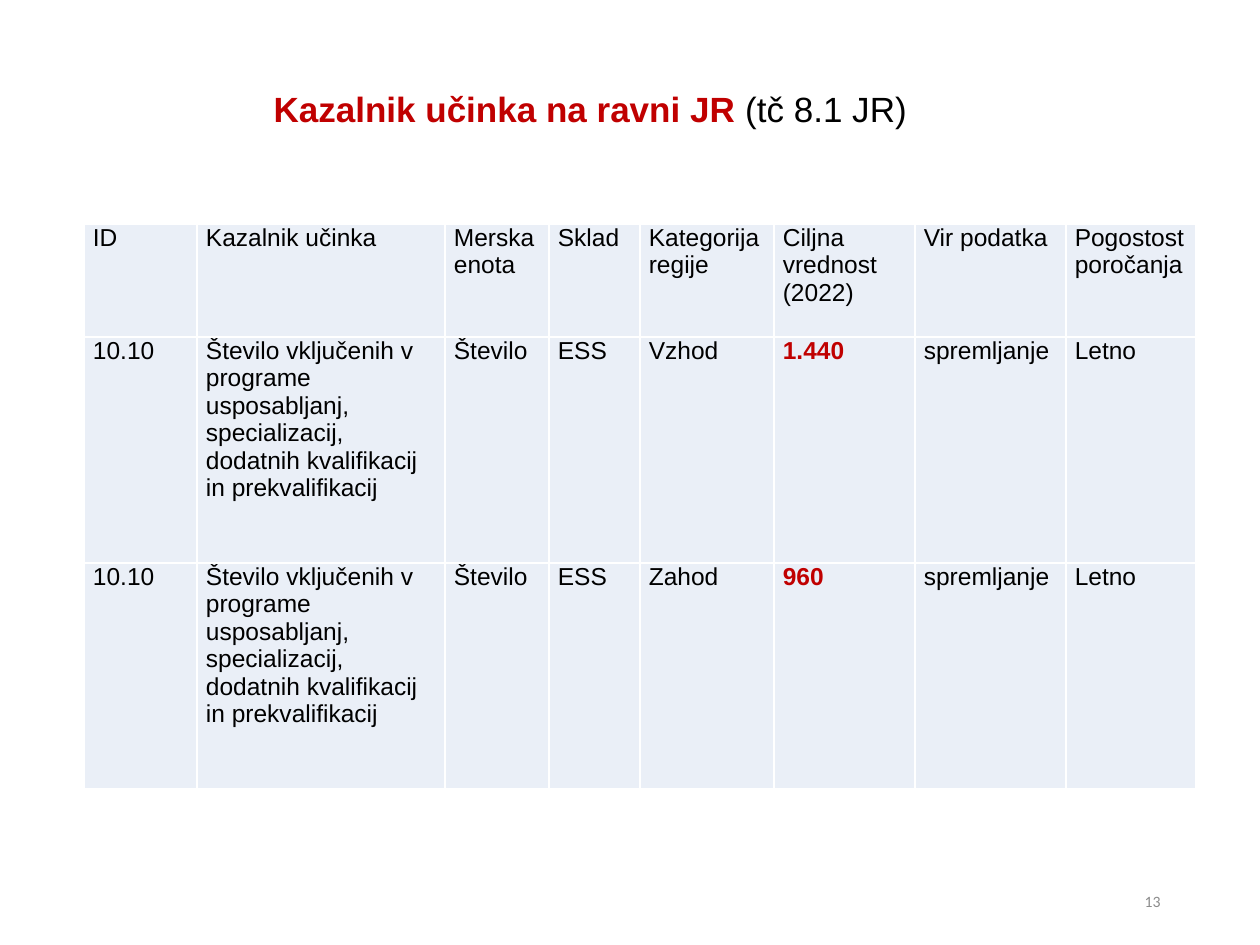
from lxml.etree import SubElement
from pptx import Presentation
from pptx.dml.color import RGBColor
from pptx.enum.text import MSO_ANCHOR, MSO_AUTO_SIZE, PP_ALIGN
from pptx.oxml.ns import qn
from pptx.util import Pt

# Content
TITLE = [("Kazalnik učinka na ravni JR ", "accent"), ("(tč 8.1 JR)", "text")]
PAGE = "13"
HEADER = ["ID", "Kazalnik učinka", "Merska enota", "Sklad", "Kategorija regije",
          "Ciljna vrednost (2022)", "Vir podatka", "Pogostost poročanja"]
INDICATOR = ("Število vključenih v programe usposabljanj, specializacij, "
             "dodatnih kvalifikacij in prekvalifikacij")
TARGETS = [("Vzhod", "1.440"), ("Zahod", "960")]
ROWS = [HEADER] + [["10.10", INDICATOR, "Število", "ESS", region, target,
                    "spremljanje", "Letno"] for region, target in TARGETS]
TARGET_COL = HEADER.index("Ciljna vrednost (2022)")

# Layout in px
SCALE = 914400 / 126
SLIDE = (1260, 945)
TITLE_BOX = (261, 81, 714, 55)
PAGE_BOX = (890, 876, 283, 50)
TABLE_AT = (84, 224)
COL_WIDTHS = [113, 248, 104, 91, 134, 141, 151, 130]
ROW_HEIGHTS = [113, 226, 226]
CELL_MARGINS = {"margin_left": 9, "margin_right": 9, "margin_top": 0, "margin_bottom": 0}

THEME = {
    "cell": "EAEFF7",
    "border": "FFFFFF",
    "border_width": Pt(1),
    "text": {"name": "Arial", "bold": False, "color": "000000"},
    "accent": {"name": "Arial", "bold": True, "color": "C00000"},
    "page": {"name": "Calibri", "bold": False, "color": "8C8C8C"},
    "title_size": 20,
    "cell_size": 14,
    "page_size": 9,
}


def px(value):
    return round(value * SCALE)


def add_run(p, text, style, size):
    r = p.add_run()
    r.text = text
    for name, value in THEME[style].items():
        if name == "color":
            r.font.color.rgb = RGBColor.from_string(value)
        else:
            setattr(r.font, name, value)
    r.font.size = Pt(size)


def add_borders(cell):
    tcPr = cell._tc.get_or_add_tcPr()
    for side in ("lnL", "lnR", "lnT", "lnB"):
        ln = SubElement(tcPr, qn(f"a:{side}"), w=str(THEME["border_width"]))
        fill = SubElement(ln, qn("a:solidFill"))
        SubElement(fill, qn("a:srgbClr"), val=THEME["border"])


def add_title(s):
    sp = s.shapes.title
    sp.left, sp.top, sp.width, sp.height = map(px, TITLE_BOX)
    tf = sp.text_frame
    for name, value in {"word_wrap": True, "auto_size": MSO_AUTO_SIZE.NONE,
                        "vertical_anchor": MSO_ANCHOR.TOP}.items():
        setattr(tf, name, value)
    p = tf.paragraphs[0]
    p.alignment = PP_ALIGN.LEFT
    for text, style in TITLE:
        add_run(p, text, style, THEME["title_size"])


def add_indicators(s):
    frame = s.shapes.add_table(len(ROWS), len(HEADER), *map(px, TABLE_AT),
                               px(sum(COL_WIDTHS)), px(sum(ROW_HEIGHTS)))
    table = frame.table
    for column, width in zip(table.columns, COL_WIDTHS):
        column.width = px(width)
    for i, (values, height) in enumerate(zip(ROWS, ROW_HEIGHTS)):
        table.rows[i].height = px(height)
        for j, text in enumerate(values):
            cell = table.cell(i, j)
            for name, value in CELL_MARGINS.items():
                setattr(cell, name, px(value))
            add_borders(cell)
            cell.fill.solid()
            cell.fill.fore_color.rgb = RGBColor.from_string(THEME["cell"])
            style = "accent" if i > 0 and j == TARGET_COL else "text"
            add_run(cell.text_frame.paragraphs[0], text, style, THEME["cell_size"])


def add_page_number(s):
    tf = s.shapes.add_textbox(*map(px, PAGE_BOX)).text_frame
    tf.word_wrap = True
    tf.vertical_anchor = MSO_ANCHOR.MIDDLE
    p = tf.paragraphs[0]
    p.alignment = PP_ALIGN.RIGHT
    add_run(p, PAGE, "page", THEME["page_size"])


def main():
    prs = Presentation()
    prs.slide_width, prs.slide_height = map(px, SLIDE)
    s = prs.slides.add_slide(prs.slide_layouts[5])
    add_title(s)
    add_indicators(s)
    add_page_number(s)
    prs.save("out.pptx")


if __name__ == "__main__":
    main()
